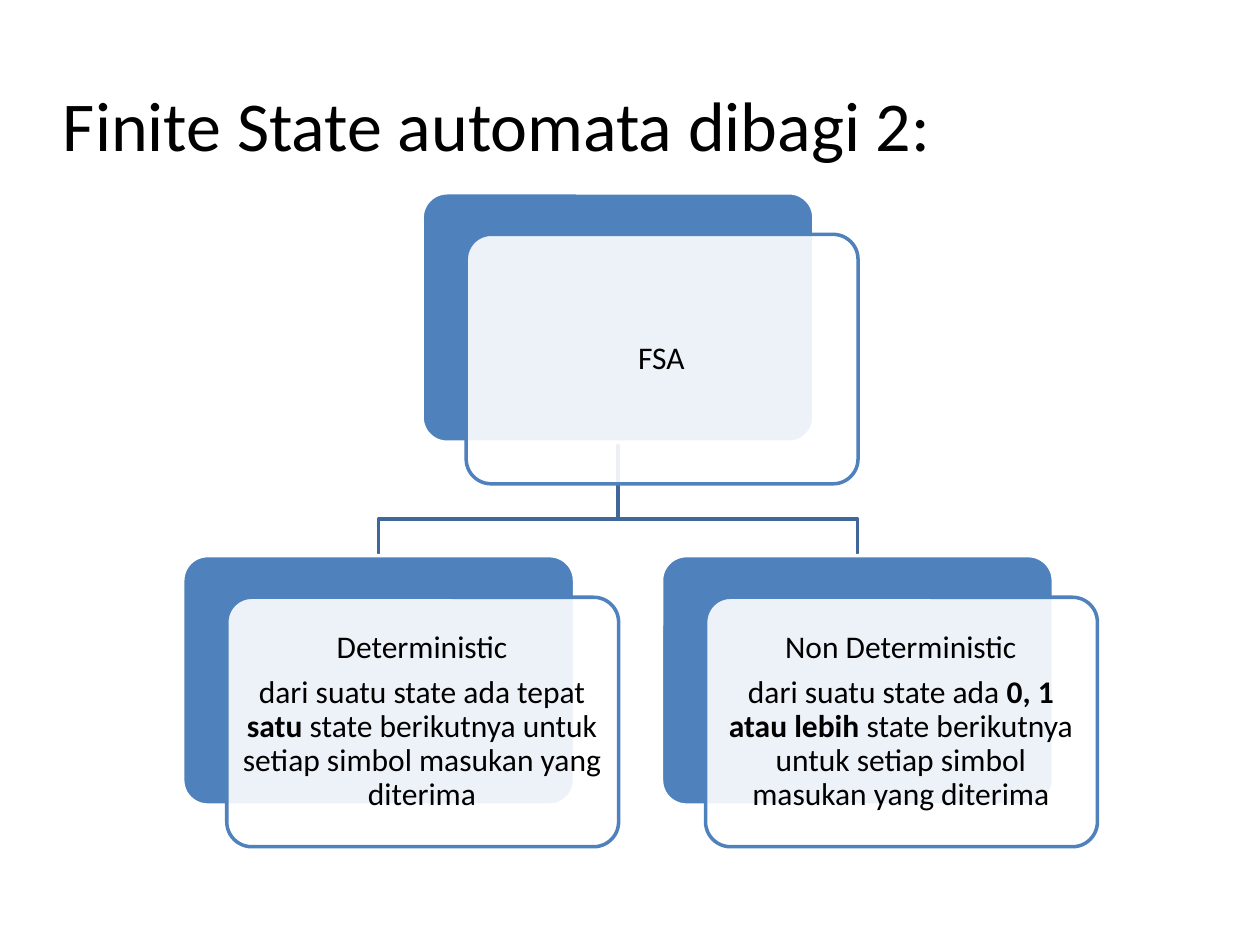
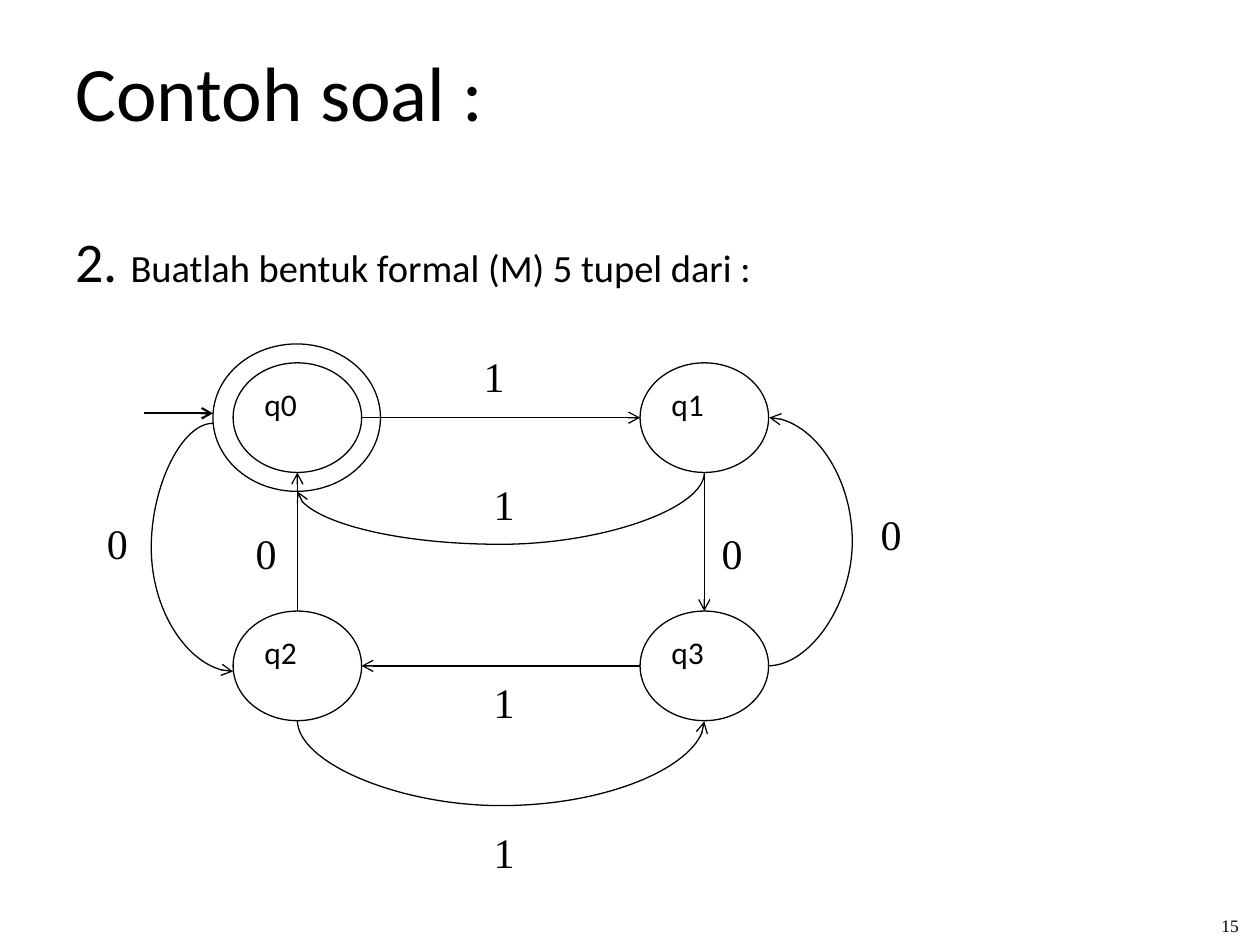
from dataclasses import dataclass

from lxml import etree
from pptx import Presentation
from pptx.dml.color import RGBColor
from pptx.enum import shapes, text
from pptx.oxml.ns import qn
from pptx.util import Inches, Pt


@dataclass(frozen=True)
class Theme:
    ink: RGBColor = RGBColor(0, 0, 0)
    paper: RGBColor = RGBColor(255, 255, 255)
    blue: RGBColor = RGBColor(0x4F, 0x81, 0xBD)
    branch: RGBColor = RGBColor(0x3F, 0x67, 0x97)
    sans: str = "Calibri"
    serif: str = "Times New Roman"
    title: int = 40
    big_title: int = 44
    number: int = 32
    body: int = 22
    symbol: int = 24
    node: int = 18
    page: int = 10
    heavy: float = 2
    medium: float = 1.25
    thin: float = 0.75


T = Theme()
LEFT, CENTER, RIGHT = text.PP_ALIGN.LEFT, text.PP_ALIGN.CENTER, text.PP_ALIGN.RIGHT
TOP, MIDDLE = text.MSO_ANCHOR.TOP, text.MSO_ANCHOR.MIDDLE

# Size and offset of the layered cards
CARD_W, CARD_H, SHIFT_X, SHIFT_Y = 3.11, 1.98, 0.35, 0.33
# Size and grid of the automaton states
STATE_W, STATE_H = 1.02, 0.87
COLUMNS, ROWS = (1.85, 5.08), (2.88, 4.85)


def inches(*values):
    return [Inches(v) for v in values]


# Text
def add_run(p, words, size, font=T.sans, bold=False):
    r = p.add_run()
    r.text = words
    r.font.size = Pt(size)
    r.font.name = font
    r.font.bold = bold
    r.font.color.rgb = T.ink


def add_text(s, box, paragraphs, size, font=T.sans, align=LEFT, anchor=TOP,
             margin=None, spacing=None, after=None, wrap=True):
    """Each paragraph is a list of (words, bold) pairs."""
    tf = s.shapes.add_textbox(*inches(*box)).text_frame
    tf.word_wrap = wrap
    tf.vertical_anchor = anchor
    if margin is not None:
        tf.margin_left = tf.margin_right = Inches(margin)
        tf.margin_top = tf.margin_bottom = Inches(margin)
    for i, runs in enumerate(paragraphs):
        p = tf.paragraphs[0] if i == 0 else tf.add_paragraph()
        p.alignment = align
        if spacing:
            p.line_spacing = spacing
        if after:
            p.space_after = Pt(after)
        for words, bold in runs:
            add_run(p, words, size, font, bold)
    return tf


def add_title(s, words, height, size, **options):
    add_text(s, (0.5, 0.3, 9, height), [[(words, False)]], size,
             anchor=MIDDLE, **options)


def add_symbol(s, left, top, words):
    tf = add_text(s, (left, top, 0.37, 0.5), [[(words, False)]], T.symbol,
                  T.serif, wrap=False)
    tf.auto_size = text.MSO_AUTO_SIZE.SHAPE_TO_FIT_TEXT


# Shapes
def add_filled(s, kind, box, fill, line, width):
    sp = s.shapes.add_shape(kind, *inches(*box))
    sp.shadow.inherit = False
    sp.fill.solid()
    sp.fill.fore_color.rgb = fill
    sp.line.color.rgb = line
    sp.line.width = Pt(width)
    return sp


def add_card(s, left, top, paragraphs):
    kind = shapes.MSO_SHAPE.ROUNDED_RECTANGLE
    back = add_filled(s, kind, (left, top, CARD_W, CARD_H), T.blue, T.paper, T.heavy)
    x, y = left + SHIFT_X, top + SHIFT_Y
    front = add_filled(s, kind, (x, y, CARD_W, CARD_H), T.paper, T.blue, T.heavy)
    back.adjustments[0] = front.adjustments[0] = 0.1
    color = front.fill._xPr.find(".//" + qn("a:srgbClr"))
    etree.SubElement(color, qn("a:alpha"), val="90000")
    add_text(s, (x + 0.05, y + 0.06, 3, 1.86), paragraphs, T.node, align=CENTER,
             anchor=MIDDLE, margin=0.07, spacing=0.9, after=6.3)


def add_branch(s, start, end, turn_y):
    points = [start, (start[0], turn_y), (end[0], turn_y), end]
    points = [inches(*point) for point in points]
    builder = s.shapes.build_freeform(*points[0])
    builder.add_line_segments(points[1:], close=False)
    sp = builder.convert_to_shape()
    sp.shadow.inherit = False
    sp.fill.background()
    sp.line.color.rgb = T.branch
    sp.line.width = Pt(T.heavy)


def add_ellipse(s, box, words=None):
    sp = add_filled(s, shapes.MSO_SHAPE.FLOWCHART_CONNECTOR, box, T.paper, T.ink, T.thin)
    if words:
        tf = sp.text_frame
        tf.vertical_anchor = TOP
        p = tf.paragraphs[0]
        p.alignment = LEFT
        add_run(p, words, T.node)


# Arrows
def add_arrow(s, start, end, width=T.thin, kind=shapes.MSO_CONNECTOR.STRAIGHT):
    c = s.shapes.add_connector(kind, *inches(*start, *end))
    c.line.color.rgb = T.ink
    c.line.width = Pt(width)
    etree.SubElement(c.line._get_or_add_ln(), qn("a:tailEnd"), type="arrow")
    etree.SubElement(c._element.spPr, qn("a:effectLst"))
    return c


def add_curve(s, start, end, reach, turn=0, flip=""):
    """Curve whose bow goes `reach` inches along its own, turned x axis."""
    c = add_arrow(s, start, end, kind=shapes.MSO_CONNECTOR.CURVE)
    w, h = abs(end[0] - start[0]), abs(end[1] - start[1])
    if turn in (90, 270):
        w, h = h, w
    w = max(w, 0.01)
    mid_x, mid_y = (start[0] + end[0]) / 2, (start[1] + end[1]) / 2
    c.left, c.top, c.width, c.height = inches(mid_x - w / 2, mid_y - h / 2, w, h)
    xfrm = c._element.spPr.find(qn("a:xfrm"))
    xfrm.set("rot", str(turn * 60000))
    for axis in "HV":
        xfrm.set("flip" + axis, "1" if axis in flip else "0")
    geometry = c._element.spPr.find(qn("a:prstGeom"))
    guides = geometry.find(qn("a:avLst"))
    if guides is None:
        guides = etree.SubElement(geometry, qn("a:avLst"))
    etree.SubElement(guides, qn("a:gd"), name="adj1",
                     fmla=f"val {round(reach / w * 100000)}")


# Slides
def build_types(s):
    add_title(s, "Finite State automata dibagi 2:", 1.25, T.title,
              margin=0, spacing=1.16)
    root_x, root_y, child_y = 3.35, 1.53, 4.41
    child_xs = (1.45, 5.25)
    for x in reversed(child_xs):
        add_branch(s, (root_x + CARD_W / 2, root_y + CARD_H),
                   (x + CARD_W / 2, child_y), 4.12)
    add_card(s, root_x, root_y, [[("FSA", False)]])
    kinds = [
        [[("Deterministic", False)],
         [("dari suatu state ada tepat ", False), ("satu", True),
          (" state berikutnya untuk setiap simbol masukan yang diterima", False)]],
        [[("Non Deterministic", False)],
         [("dari suatu state ada ", False), ("0, 1 atau lebih ", True),
          ("state berikutnya untuk setiap simbol masukan yang diterima", False)]],
    ]
    for x, paragraphs in zip(child_xs, kinds):
        add_card(s, x, child_y, paragraphs)


def build_exercise(s):
    # Heading, question and page number
    add_title(s, "Contoh soal :", 0.84, T.big_title)
    tf = add_text(s, (0.5, 1.75, 9, 0.8), [[("2. ", False)]], T.number)
    add_run(tf.paragraphs[0], "Buatlah bentuk formal (M) 5 tupel dari :", T.body)
    add_text(s, (7.66, 7.19, 2.27, 0.31), [[("15", False)]], T.page, T.serif,
             align=RIGHT, anchor=MIDDLE)

    # States, with a second ring round the accepting one
    add_ellipse(s, (1.69, 2.73, 1.33, 1.17))
    names = (("q0", "q1"), ("q2", "q3"))
    for y, row in zip(ROWS, names):
        for x, name in zip(COLUMNS, row):
            add_ellipse(s, (x, y, STATE_W, STATE_H), name)

    # Transitions
    left, right = COLUMNS
    mid_left, mid_right = (x + STATE_W / 2 for x in COLUMNS)
    mid_top, mid_bottom = (y + STATE_H / 2 for y in ROWS)
    under_top, under_bottom = (y + STATE_H for y in ROWS)
    add_arrow(s, (1.14, 3.28), (1.69, 3.28), T.medium)
    add_arrow(s, (left + STATE_W, mid_top), (right, mid_top))
    add_arrow(s, (mid_right, under_top), (mid_right, ROWS[1]))
    add_arrow(s, (right, mid_bottom), (left + STATE_W, mid_bottom))
    add_arrow(s, (mid_left, ROWS[1]), (mid_left, under_top))
    outer = right + STATE_W
    add_curve(s, (outer, mid_bottom), (outer, mid_top), 0.68, flip="V")
    add_curve(s, (mid_left, under_bottom), (mid_right, under_bottom), 0.69, 270, "H")
    add_curve(s, (1.69, 3.36), (left, 5.33), -0.49, 180, "HV")
    add_curve(s, (mid_right, under_top), (mid_left, 3.9), 0.57, 90)

    # Input symbols
    for x, y, symbol in [
        (3.74, 2.73, "1"), (3.82, 3.75, "1"), (3.82, 5.32, "1"), (3.82, 6.51, "1"),
        (0.75, 4.06, "0"), (1.93, 4.14, "0"), (5.63, 4.14, "0"), (6.89, 3.99, "0"),
    ]:
        add_symbol(s, x, y, symbol)


def main():
    prs = Presentation()
    prs.slide_width, prs.slide_height = inches(10, 7.5)
    for build in (build_types, build_exercise):
        build(prs.slides.add_slide(prs.slide_layouts[6]))
    prs.save("out.pptx")


if __name__ == "__main__":
    main()
